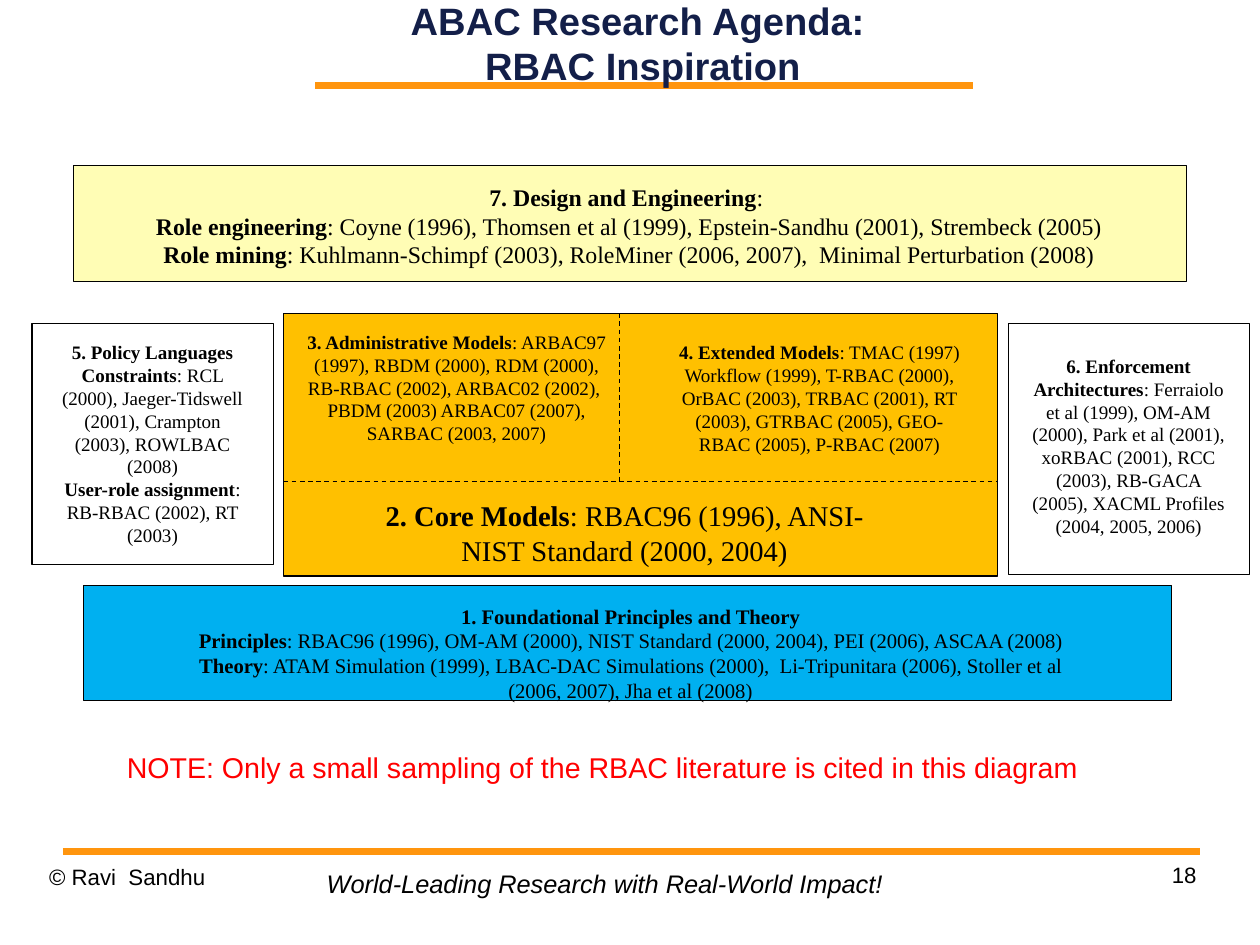
from dataclasses import dataclass

from lxml import etree
from pptx import Presentation
from pptx.dml.color import RGBColor
from pptx.enum import dml, shapes, text
from pptx.oxml import ns
from pptx.util import Inches, Pt


@dataclass(frozen=True)
class Theme:
    sans: str = "Arial"
    serif: str = "Times New Roman"
    black: str = "000000"
    white: str = "FFFFFF"
    navy: str = "131F49"
    red: str = "FF0000"
    orange: str = "FF950E"
    blue: str = "00B0F0"
    amber: str = "FFC000"
    cream: str = "FFFDB5"
    title: int = 24
    large: int = 18
    tagline: int = 16
    design: int = 15
    footer: int = 14
    foundation: int = 13
    model: int = 12
    rule: float = 4.31
    border: float = 0.75


THEME = Theme()
CM_PER_INCH = 2.54
NO_INSET = (0, 0)
FOOTER_INSET = (0.1, 0.05)
BODY_INSET = (0.11, 0.06)
LEFT = text.PP_ALIGN.LEFT
CENTER = text.PP_ALIGN.CENTER
RIGHT = text.PP_ALIGN.RIGHT

FOUNDATION = [
    ("1. Foundational Principles and Theory", ""),
    ("Principles", ": RBAC96 (1996), OM-AM (2000), NIST Standard (2000, 2004), "
     "PEI (2006), ASCAA (2008)"),
    ("Theory", ": ATAM Simulation (1999), LBAC-DAC Simulations (2000),  "
     "Li-Tripunitara (2006), Stoller et al (2006, 2007), Jha et al (2008)"),
]
CORE = [("2. Core Models", ": RBAC96 (1996), ANSI-NIST Standard (2000, 2004)")]
ADMINISTRATIVE = [
    ("3. Administrative Models", ": ARBAC97 (1997), RBDM (2000), RDM (2000), "
     "RB-RBAC (2002), ARBAC02 (2002),  PBDM (2003) ARBAC07 (2007), "
     "SARBAC (2003, 2007)"),
]
EXTENDED = [
    ("4. Extended Models", ": TMAC (1997) Workflow (1999), T-RBAC (2000), "
     "OrBAC (2003), TRBAC (2001), RT (2003), GTRBAC (2005), GEO-RBAC (2005), "
     "P-RBAC (2007)"),
]
POLICY = [
    ("5. Policy Languages Constraints", ": RCL (2000), Jaeger-Tidswell (2001), "
     "Crampton (2003), ROWLBAC (2008)"),
    ("User-role assignment", ":"),
    ("", "RB-RBAC (2002), RT (2003)"),
]
ENFORCEMENT = [
    ("6. Enforcement Architectures", ": Ferraiolo et al (1999), OM-AM (2000), "
     "Park et al (2001), xoRBAC (2001), RCC (2003), RB-GACA (2005), "
     "XACML Profiles (2004, 2005, 2006)"),
]
DESIGN = [
    ("7. Design and Engineering", ": "),
    ("Role engineering", ": Coyne (1996), Thomsen et al (1999), "
     "Epstein-Sandhu (2001), Strembeck (2005)"),
    ("Role mining", ": Kuhlmann-Schimpf (2003), RoleMiner (2006, 2007),  "
     "Minimal Perturbation (2008)"),
]


def rgb(color):
    return RGBColor.from_string(color)


def style(font, face, size, color, bold=False, italic=False):
    font.name = face
    font.size = Pt(size)
    font.color.rgb = rgb(color)
    font.bold = bold
    font.italic = italic


def set_frame(frame, inset, wrap=True):
    frame.word_wrap = wrap
    frame.auto_size = text.MSO_AUTO_SIZE.NONE
    frame.margin_left = frame.margin_right = Inches(inset[0])
    frame.margin_top = frame.margin_bottom = Inches(inset[1])


def add_title(page, lines):
    title = page.shapes.title
    page.shapes._spTree.append(title._element)
    title.left, title.top = Inches(2.41), Inches(0)
    title.width, title.height = Inches(6.43), Inches(0.75)
    frame = title.text_frame
    set_frame(frame, NO_INSET)
    frame.vertical_anchor = text.MSO_ANCHOR.MIDDLE
    frame.text = "\n".join(lines)
    for para in frame.paragraphs:
        para.alignment = CENTER
        for span in para.runs:
            style(span.font, THEME.sans, THEME.title, THEME.navy, bold=True)


def add_line(page, start, end, color, width, dashed=False):
    ends = [Inches(value) for value in (*start, *end)]
    line = page.shapes.add_connector(shapes.MSO_CONNECTOR.STRAIGHT, *ends)
    line.line.color.rgb = rgb(color)
    line.line.width = Pt(width)
    if dashed:
        line.line.dash_style = dml.MSO_LINE.DASH
    etree.SubElement(line._element.spPr, ns.qn("a:effectLst"))


def add_panel(page, area, fill):
    panel = page.shapes.add_shape(
        shapes.MSO_SHAPE.RECTANGLE, *[Inches(value) for value in area])
    panel.shadow.inherit = False
    panel.fill.solid()
    panel.fill.fore_color.rgb = rgb(fill)
    panel.line.color.rgb = rgb(THEME.black)
    panel.line.width = Pt(THEME.border)


def add_label(page, area, words, size, color=THEME.black, align=LEFT,
              inset=NO_INSET, wrap=True, italic=False, spacing=None):
    box = page.shapes.add_textbox(*[Inches(value) for value in area])
    set_frame(box.text_frame, inset, wrap)
    box.text_frame.text = words
    para = box.text_frame.paragraphs[0]
    para.alignment = align
    para.line_spacing = spacing
    style(para.runs[0].font, THEME.sans, size, color, italic=italic)


def add_citations(page, area, entries, size, fill=None):
    box = page.shapes.add_textbox(*[Inches(value) for value in area])
    if fill:
        box.fill.solid()
        box.fill.fore_color.rgb = rgb(fill)
    frame = box.text_frame
    set_frame(frame, BODY_INSET)
    for index, (heading, works) in enumerate(entries):
        para = frame.add_paragraph() if index else frame.paragraphs[0]
        para.alignment = CENTER
        for words, bold in ((heading, True), (works, False)):
            if words:
                span = para.add_run()
                span.text = words
                style(span.font, THEME.serif, size, THEME.black, bold=bold)


def add_footer(page):
    add_label(page, (7.9, 7.53, 2.57, 0.57), "18", THEME.footer,
              align=RIGHT, spacing=1.01)
    add_label(page, (2.76, 7.55, 5.08, 0.37),
              "World-Leading Research with Real-World Impact!", THEME.tagline,
              inset=FOOTER_INSET, wrap=False, italic=True)
    add_label(page, (0.43, 7.55, 2.57, 0.57), "© Ravi  Sandhu", THEME.footer,
              spacing=1.01)


def add_agenda(page):
    add_panel(page, (0.73, 5.12, 9.52, 1.01), THEME.blue)
    add_citations(page, (1.38, 5.22, 8.27, 0.99), FOUNDATION, THEME.foundation)

    add_panel(page, (2.48, 2.74, 6.25, 2.3), THEME.amber)
    add_citations(page, (3.03, 4.3, 4.87, 0.72), CORE, THEME.large, THEME.amber)
    add_citations(page, (2.57, 2.83, 2.85, 1.12), ADMINISTRATIVE, THEME.model,
                  THEME.amber)
    add_citations(page, (5.79, 2.92, 2.76, 1.12), EXTENDED, THEME.model,
                  THEME.amber)
    for start, end in (((2.48, 4.21), (8.73, 4.21)), ((5.42, 2.74), (5.42, 4.21))):
        add_line(page, start, end, THEME.black, THEME.border, dashed=True)

    add_panel(page, (0.28, 2.83, 2.11, 2.11), THEME.white)
    add_citations(page, (0.37, 2.92, 1.93, 1.93), POLICY, THEME.model, THEME.white)
    add_panel(page, (8.82, 2.83, 2.11, 2.2), THEME.white)
    add_citations(page, (8.91, 3.04, 1.93, 1.73), ENFORCEMENT, THEME.model,
                  THEME.white)

    add_panel(page, (0.64, 1.45, 9.74, 1.01), THEME.cream)
    add_citations(page, (0.73, 1.54, 9.55, 1.12), DESIGN, THEME.design)


def main():
    deck = Presentation()
    deck.slide_width = Inches(28 / CM_PER_INCH)
    deck.slide_height = Inches(21 / CM_PER_INCH)
    page = deck.slides.add_slide(deck.slide_layouts.get_by_name("Title Only"))
    for left, right, top in ((2.76, 8.51, 0.75), (0.55, 10.5, 7.45)):
        add_line(page, (left, top), (right, top), THEME.orange, THEME.rule)
    add_footer(page)
    add_title(page, ["ABAC Research Agenda: ", "RBAC Inspiration"])
    add_agenda(page)
    add_label(page, (1, 6.5, 8.62, 0.41),
              "NOTE: Only a small sampling of the RBAC literature is cited in this diagram",
              THEME.large, color=THEME.red, inset=BODY_INSET, wrap=False)
    deck.save("out.pptx")


if __name__ == "__main__":
    main()
